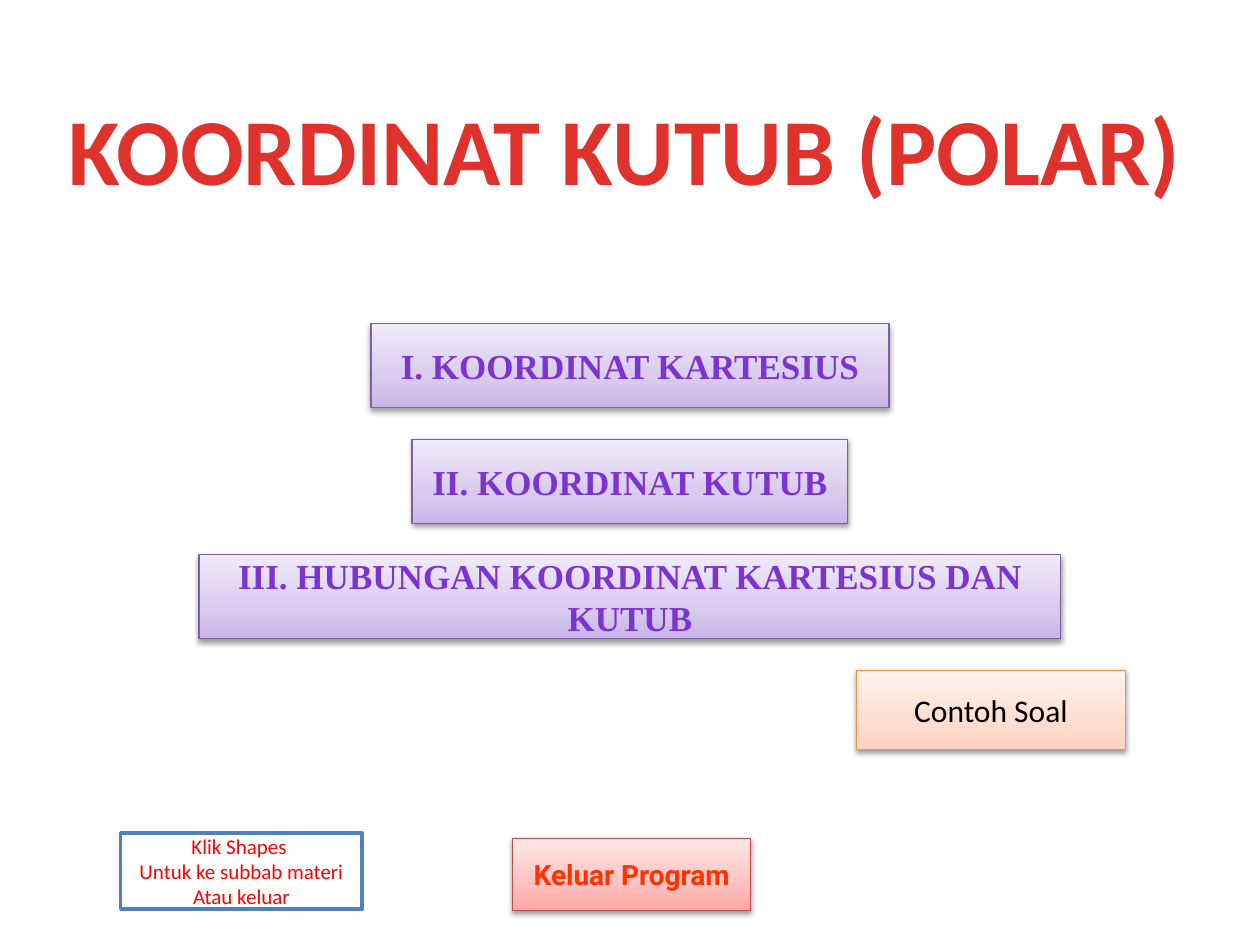
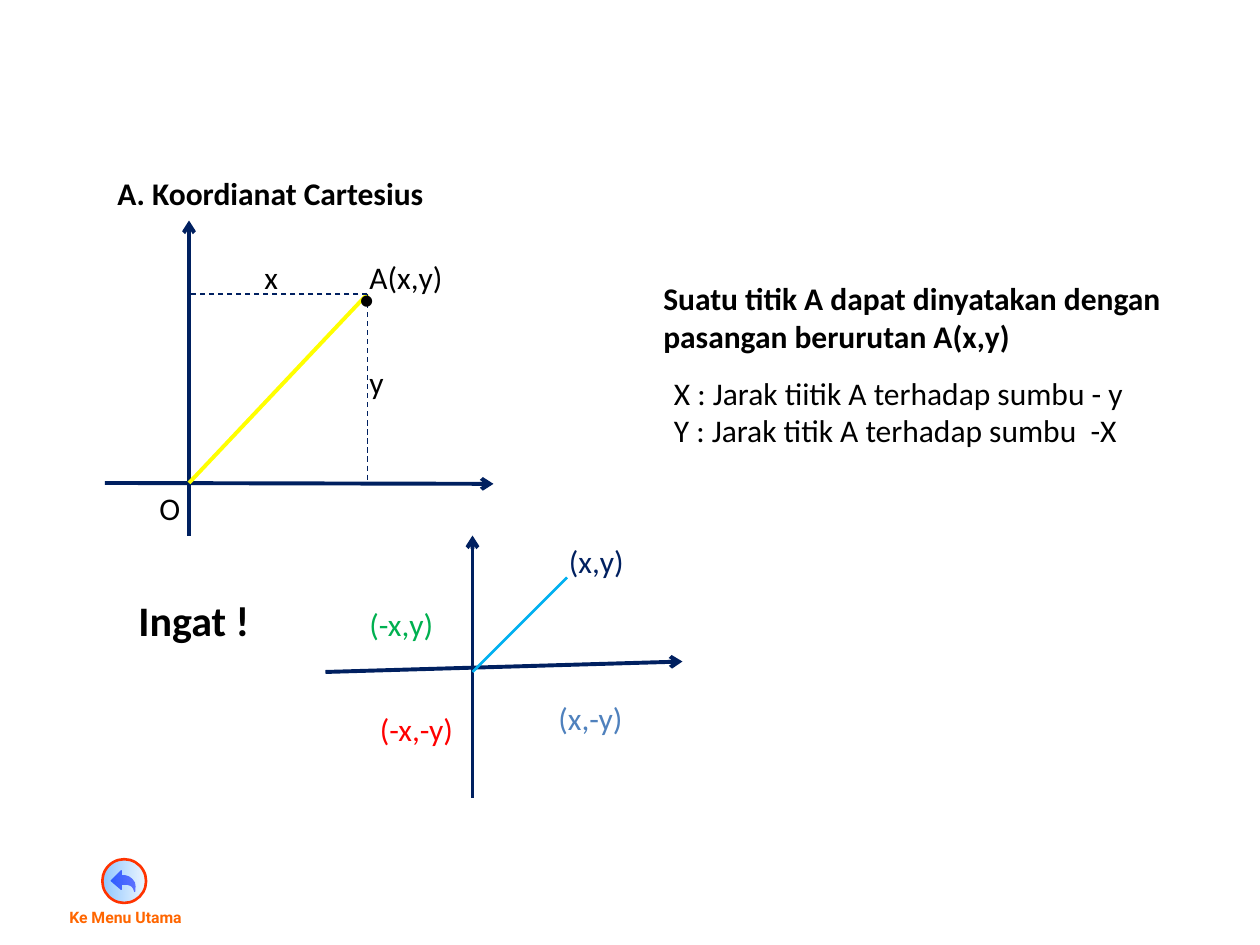
from dataclasses import dataclass

from lxml import etree
from pptx import Presentation
from pptx.dml.color import RGBColor
from pptx.enum.dml import MSO_LINE
from pptx.enum.shapes import MSO_CONNECTOR, MSO_SHAPE
from pptx.enum.text import MSO_ANCHOR, MSO_AUTO_SIZE, PP_ALIGN
from pptx.oxml.ns import qn
from pptx.util import Pt

LEFT, CENTER = PP_ALIGN.LEFT, PP_ALIGN.CENTER
MIDDLE = MSO_ANCHOR.MIDDLE
GROW = MSO_AUTO_SIZE.SHAPE_TO_FIT_TEXT
RECT, OVAL = MSO_SHAPE.RECTANGLE, MSO_SHAPE.OVAL
STRAIGHT = MSO_CONNECTOR.STRAIGHT
DASH = MSO_LINE.DASH


@dataclass(frozen=True)
class Theme:
    body_font: str = "Calibri"
    menu_font: str = "Times New Roman"
    button_font: str = "Roboto"
    title_size: float = 54
    callout_size: float = 24
    menu_size: float = 20
    body_size: float = 18
    button_size: float = 16
    hint_size: float = 12
    back_size: float = 9
    black: str = "000000"
    white: str = "FFFFFF"
    title: str = "E0322D"
    menu_text: str = "7B34D2"
    red: str = "FF0000"
    green: str = "00B050"
    blue: str = "4F81BD"
    sky: str = "00B0F0"
    yellow: str = "FFFF00"
    navy: str = "002060"
    exit_text: str = "FF3300"
    back_text: str = "FF6600"
    back_arrow: str = "0000FF"
    purple: tuple = ("C9B5E8", "D8CBEE", "F0EAF9", "7D60A0")
    coral: tuple = ("FFA6A5", "FFC0BF", "FFE7E7", "BF4C48")
    orange: tuple = ("FFD2BD", "FFDED0", "FFF2ED", "F69240")


T = Theme()


def rgb(value):
    return RGBColor.from_string(value)


def add_el(parent, tag, **attrs):
    el = etree.SubElement(parent, qn(tag))
    for name, value in attrs.items():
        el.set(name, str(value))
    return el


def add_color(parent, value, opacity):
    color = add_el(parent, "a:srgbClr", val=value)
    if opacity < 100:
        add_el(color, "a:alpha", val=opacity * 1000)


def gradient(sp, stops, angle):
    sp.fill.gradient()
    grad = sp._element.spPr.find(qn("a:gradFill"))
    for child in list(grad):
        grad.remove(child)
    stop_list = add_el(grad, "a:gsLst")
    for position, value, opacity in stops:
        add_color(add_el(stop_list, "a:gs", pos=position * 1000), value, opacity)
    add_el(grad, "a:lin", ang=angle * 60000, scaled=0)


def soft_shadow(sp):
    effects = sp._element.spPr.find(qn("a:effectLst"))
    shadow = add_el(effects, "a:outerShdw", blurRad=Pt(3.1), dist=Pt(1.6),
                    dir=90 * 60000, rotWithShape=0)
    add_color(shadow, T.black, 38)


def write(tf, text, size=T.body_size, font=T.body_font, color=T.black,
          bold=False, align=LEFT, wrap=True):
    tf.word_wrap = wrap
    for i, line in enumerate(text.split("\n")):
        p = tf.paragraphs[0] if i == 0 else tf.add_paragraph()
        p.alignment = align
        r = p.add_run()
        r.text = line
        r.font.size = Pt(size)
        r.font.name = font
        r.font.bold = bold
        r.font.color.rgb = rgb(color)


def label(s, text, x, y, w, h=28.8, wrap=False, **fmt):
    sp = s.shapes.add_textbox(Pt(x), Pt(y), Pt(w), Pt(h))
    write(sp.text_frame, text, wrap=wrap, **fmt)
    sp.text_frame.auto_size = GROW
    return sp


def outline(sp, color, width):
    sp.shadow.inherit = False
    sp.line.color.rgb = rgb(color)
    sp.line.width = Pt(width)


def button(s, box, text, palette, **fmt):
    sp = s.shapes.add_shape(RECT, *map(Pt, box))
    outline(sp, palette[3], 0.75)
    gradient(sp, [(pos, value, 100) for pos, value in zip((0, 35, 100), palette)], 270)
    soft_shadow(sp)
    sp.text_frame.vertical_anchor = MIDDLE
    write(sp.text_frame, text, align=CENTER, **fmt)


def line(s, x, y, start, end, color=T.navy, width=2.25, dash=None, arrow=False):
    c = s.shapes.add_connector(STRAIGHT, Pt(x + start[0]), Pt(y + start[1]),
                               Pt(x + end[0]), Pt(y + end[1]))
    c.line.color.rgb = rgb(color)
    c.line.width = Pt(width)
    if dash:
        c.line.dash_style = dash
    if arrow:
        add_el(c.line._get_or_add_ln(), "a:tailEnd", type="arrow")
    add_el(c._element.spPr, "a:effectLst")


def topic_menu(s, x, y, w):
    topics = (
        ("I. KOORDINAT KARTESIUS", 296),
        ("II. KOORDINAT KUTUB", 249),
        ("III. HUBUNGAN KOORDINAT KARTESIUS DAN KUTUB", 492.5),
    )
    for i, (text, width) in enumerate(topics):
        button(s, (x + (w - width) / 2, y + i * 66, width, 48), text, T.purple,
               size=T.menu_size, font=T.menu_font, color=T.menu_text, bold=True)


def click_hint(s, x, y, w, h):
    sp = s.shapes.add_shape(RECT, Pt(x), Pt(y), Pt(w), Pt(h))
    outline(sp, T.blue, 2)
    sp.fill.solid()
    sp.fill.fore_color.rgb = rgb(T.white)
    sp.text_frame.vertical_anchor = MIDDLE
    write(sp.text_frame, "Klik Shapes \nUntuk ke subbab materi\nAtau keluar",
          size=T.hint_size, color=T.red, align=CENTER)


def menu_slide(s):
    label(s, "KOORDINAT KUTUB (POLAR)", 23, 48.2, 668, 72.7,
          size=T.title_size, color=T.title, bold=True, align=CENTER)
    topic_menu(s, 0, 185, 720)
    click_hint(s, 69, 476, 138, 43.5)
    button(s, (293, 479, 136, 41.5), "Keluar Program", T.coral, size=T.button_size,
           font=T.button_font, color=T.exit_text, bold=True, wrap=False)
    button(s, (489.5, 383, 153.5, 45.5), "Contoh Soal", T.orange)


def point_plane(s, x, y):
    origin, point = (48, 150), (150, 42)
    line(s, x, y, (48, 180), (48, 0), arrow=True)
    line(s, x, y, (0, 150), (222, 150.5), arrow=True)
    line(s, x, y, origin, point, color=T.yellow)
    for foot in ((150, 150), (48, 42)):
        line(s, x, y, point, foot, width=0.75, dash=DASH)
    for text, dx, dy, w in (("•", 138, 30, 24), ("x", 84, 18, 22.5),
                            ("y", 144, 78, 23), ("A(x,y)", 144, 18, 57),
                            ("O", 24, 150, 26.5)):
        label(s, text, x + dx, y + dy, w)


def sign_plane(s, x, y):
    line(s, x, y, (84, 150), (84, 0), arrow=True)
    line(s, x, y, (0, 78), (204, 72), arrow=True)
    line(s, x, y, (84, 78), (138, 24), color=T.sky, width=1.5)
    for text, dx, dy, w, color in (("(x,y)", 132, 0, 46, T.navy),
                                   ("(-x,-y)", 24, 96, 57.5, T.red),
                                   ("(-x,y)", 18, 36, 52, T.green),
                                   ("(x,-y)", 126, 90, 52, T.blue)):
        label(s, text, x + dx, y + dy, w, color=color)


def explanation(s, x, y):
    label(s, "Suatu titik A dapat dinyatakan dengan pasangan berurutan A(x,y)",
          x, y, 318, 51, wrap=True, bold=True)
    label(s, "X : Jarak tiitik A terhadap sumbu - y\nY : Jarak titik A terhadap sumbu  -X",
          x + 6, y + 54, 272, 51)


def back_button(s, x, y):
    curve = ((5.8, 2.9), (8, 2.9), (10.1, 3.6), (12, 5), (13.4, 7),
             (13.7, 9), (13.5, 12), (12.9, 10.3), (12, 9), (10.8, 8.3),
             (9, 7.8), (5.8, 7.8), (5.8, 10.8), (0, 5.8), (5.8, 0))
    points = [(Pt(x + 31 + dx), Pt(y + 6.5 + dy)) for dx, dy in curve]
    builder = s.shapes.build_freeform(*points[0], scale=1.0)
    builder.add_line_segments(points[1:], close=True)
    arrow = builder.convert_to_shape()
    outline(arrow, T.back_arrow, 0.63)
    arrow.fill.solid()
    arrow.fill.fore_color.rgb = rgb(T.back_arrow)
    ring = s.shapes.add_shape(OVAL, Pt(x + 26), Pt(y), Pt(25), Pt(25))
    outline(ring, T.exit_text, 1.5)
    gradient(ring, [(0, "3399FF", 56), (100, "DFEFFF", 51)], 0)
    label(s, "Ke Menu Utama", x, y + 24, 80.5, 18, size=T.back_size,
          font=T.button_font, color=T.back_text, bold=True)


def cartesian_slide(s):
    point_plane(s, 60, 126)
    label(s, "A. Koordianat Cartesius", 60, 96, 191, bold=True)
    explanation(s, 372, 156)
    label(s, "Ingat !", 72, 336, 78.5, 36.5, size=T.callout_size, bold=True)
    sign_plane(s, 186, 306)
    back_button(s, 32.5, 491)


def main():
    prs = Presentation()
    prs.slide_width, prs.slide_height = Pt(720), Pt(540)
    blank = prs.slide_layouts[6]
    for build in (menu_slide, cartesian_slide):
        build(prs.slides.add_slide(blank))
    prs.save("out.pptx")


if __name__ == "__main__":
    main()
